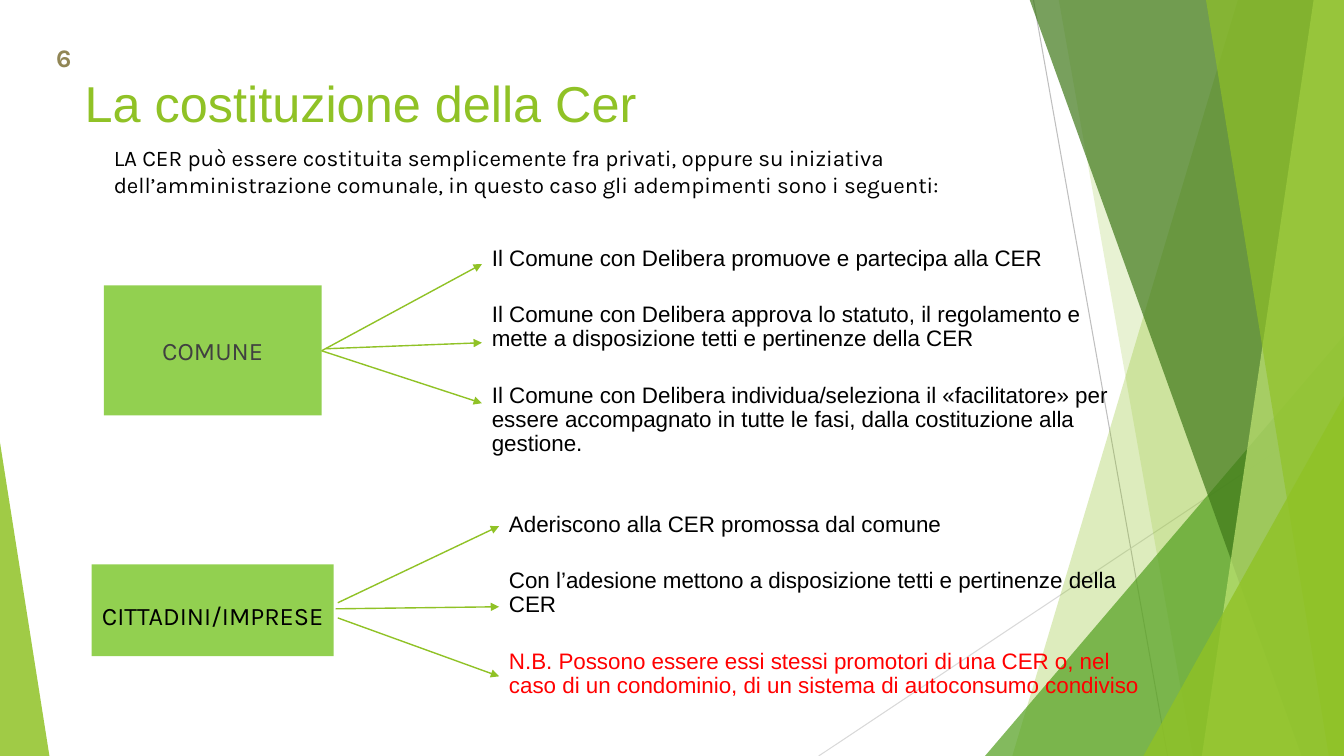
from pptx import Presentation
from pptx.dml.color import RGBColor
from pptx.enum.shapes import MSO_CONNECTOR, MSO_SHAPE
from pptx.enum.text import MSO_ANCHOR, PP_ALIGN
from pptx.oxml import parse_xml
from pptx.oxml.ns import qn
from pptx.util import Inches, Pt
from lxml import etree

NS = 'xmlns:a="http://schemas.openxmlformats.org/drawingml/2006/main"'
LIME = RGBColor(0x90, 0xC2, 0x26)
LEAF = RGBColor(0x54, 0xA0, 0x21)
FOREST = RGBColor(0x3F, 0x78, 0x19)
PALE = RGBColor(0xC0, 0xE4, 0x74)
BOX_GREEN = RGBColor(0x92, 0xD0, 0x50)
GREY = RGBColor(0xBF, 0xBF, 0xBF)
LIGHT_GREY = RGBColor(0xD9, 0xD9, 0xD9)
DARK_GREY = RGBColor(0x40, 0x40, 0x40)
OLIVE = RGBColor(0x91, 0x86, 0x55)
BLACK = RGBColor(0, 0, 0)
RED = RGBColor(0xFF, 0, 0)
WIDTH, HEIGHT = 13.33, 7.5


def add_line(s, start, end, color, width, arrow=False):
    line = s.shapes.add_connector(
        MSO_CONNECTOR.STRAIGHT, *(Inches(v) for v in (*start, *end)))
    line.line.color.rgb = color
    line.line.width = Pt(width)
    sp_pr = line._element.spPr
    if arrow:
        etree.SubElement(sp_pr.find(qn("a:ln")), qn("a:tailEnd"), type="triangle")
    etree.SubElement(sp_pr, qn("a:effectLst"))


def paint(sp, color, opacity=100):
    sp.shadow.inherit = False
    sp.line.fill.background()
    sp.fill.solid()
    sp.fill.fore_color.rgb = color
    if opacity < 100:
        clr = sp._element.spPr.find(qn("a:solidFill"))[0]
        etree.SubElement(clr, qn("a:alpha"), val=str(opacity * 1000))


def add_run(p, text, size, font, color, bold=None):
    r = p.add_run()
    r.text = text
    r.font.size = Pt(size)
    r.font.name = font
    r.font.bold = bold
    r.font.color.rgb = color
    return r


def add_text_box(s, box):
    tf = s.shapes.add_textbox(*(Inches(v) for v in box)).text_frame
    tf.word_wrap = True
    return tf


def add_band(s, top_left, bottom_left, color, opacity, top_right=WIDTH):
    corners = [(top_right, -0.01), (WIDTH, HEIGHT), (bottom_left, HEIGHT)]
    builder = s.shapes.build_freeform(Inches(top_left), Inches(-0.01))
    builder.add_line_segments([(Inches(x), Inches(y)) for x, y in corners])
    paint(builder.convert_to_shape(), color, opacity)


def add_triangle(s, left, top, width, apex, color, opacity):
    sp = s.shapes.add_shape(
        MSO_SHAPE.ISOSCELES_TRIANGLE, Inches(left), Inches(top),
        Inches(width), Inches(HEIGHT - top))
    sp.adjustments[0] = apex
    paint(sp, color, opacity)


def add_decoration(s):
    # Thin lines, then translucent facets from back to front
    add_line(s, (10.25, 0), (11.58, HEIGHT), GREY, 0.75)
    add_line(s, (WIDTH, 4.03), (8.12, HEIGHT), LIGHT_GREY, 0.75)
    add_band(s, 12.28, 10.04, LIME, 30)
    add_band(s, 10.5, 11.83, LIME, 20)
    add_triangle(s, 9.77, 3.33, 3.56, 1, LEAF, 72)
    add_band(s, 10.21, 12.91, FOREST, 70)
    add_band(s, 13.03, 11.92, PALE, 70)
    add_band(s, 11.96, 13.18, LIME, 65)
    add_triangle(s, 11.34, 3.93, 1.99, 1, LIME, 80)
    add_triangle(s, 0, 4.39, 0.49, 0, LIME, 85)


def add_header(s):
    # Title
    title = s.shapes.title
    title.left, title.top, title.width, title.height = (
        Inches(v) for v in (0.74, 0.67, 9.4, 1.44))
    tf = title.text_frame
    tf.vertical_anchor = MSO_ANCHOR.TOP
    p = tf.paragraphs[0]
    p.alignment = PP_ALIGN.LEFT
    add_run(p, "La costituzione della Cer", 36, "Arial", LIME)

    # Page number with outlined digit
    p = add_text_box(s, (0.46, 0.37, 0.46, 0.4)).paragraphs[0]
    r = add_run(p, "6", 18, "Karla", OLIVE, True)
    r.font._element.insert(0, parse_xml(
        f'<a:ln {NS} w="12700"><a:solidFill><a:srgbClr val="{LIME}"/></a:solidFill></a:ln>'))

    # Introduction
    p = add_text_box(s, (1.03, 1.38, 8.99, 0.64)).paragraphs[0]
    add_run(p, "LA CER può essere costituita semplicemente fra privati, oppure su "
            "iniziativa dell’amministrazione comunale, in questo caso gli "
            "adempimenti sono i seguenti:", 16, "Karla", BLACK)


def add_actor(s, box, name, color, drop, steps_box, steps, arrows):
    # Actor box, its label set slightly below the middle by drop
    sp = s.shapes.add_shape(MSO_SHAPE.RECTANGLE, *(Inches(v) for v in box))
    paint(sp, BOX_GREEN)
    tf = sp.text_frame
    tf.word_wrap = True
    tf.vertical_anchor = MSO_ANCHOR.MIDDLE
    tf.margin_left = tf.margin_right = Inches(0.05)
    tf.margin_top = Inches(0.05 + 2 * drop)
    p = tf.paragraphs[0]
    p.alignment = PP_ALIGN.CENTER
    add_run(p, name, 18, "Karla", color)

    # Steps
    tf = add_text_box(s, steps_box)
    for i, (text, step_color) in enumerate(steps):
        p = tf.paragraphs[0] if i == 0 else tf.add_paragraph()
        p.line_spacing = 0.9
        p.space_before = Pt(23 if i else 3)
        add_run(p, text, 16, "Arial", step_color)

    # Arrows from the actor to the left edge of the steps
    for start, end_y in arrows:
        add_line(s, start, (steps_box[0], end_y), LIME, 1, arrow=True)


def main():
    prs = Presentation()
    prs.slide_width, prs.slide_height = Inches(WIDTH), Inches(HEIGHT)
    s = prs.slides.add_slide(prs.slide_layouts[5])
    add_decoration(s)
    add_header(s)
    add_actor(
        s, (1.03, 2.83, 2.16, 1.29), "COMUNE", DARK_GREY, 0, (4.78, 2.4, 6.63, 2.2),
        [("Il Comune con Delibera promuove e partecipa alla CER", BLACK),
         ("Il Comune con Delibera approva lo statuto, il regolamento e mette a "
          "disposizione tetti e pertinenze della CER", BLACK),
         ("Il Comune con Delibera individua/seleziona il «facilitatore» per essere "
          "accompagnato in tutte le fasi, dalla costituzione alla gestione.", BLACK)],
        [((3.19, 3.48), 2.62), ((3.23, 3.46), 3.4), ((3.19, 3.48), 4)])
    add_actor(
        s, (0.91, 5.6, 2.4, 0.91), "CITTADINI/IMPRESE", BLACK, 0.05, (4.95, 5.04, 6.47, 1.96),
        [("Aderiscono alla CER promossa dal comune", BLACK),
         ("Con l’adesione mettono a disposizione tetti e pertinenze della CER", BLACK),
         ("N.B. Possono essere essi stessi promotori di una CER o, nel caso di un "
          "condominio, di un sistema di autoconsumo condiviso", RED)],
        [((3.35, 5.98), 5.22), ((3.33, 6.04), 6.02), ((3.35, 6.13), 6.71)])
    prs.save("out.pptx")


if __name__ == "__main__":
    main()
